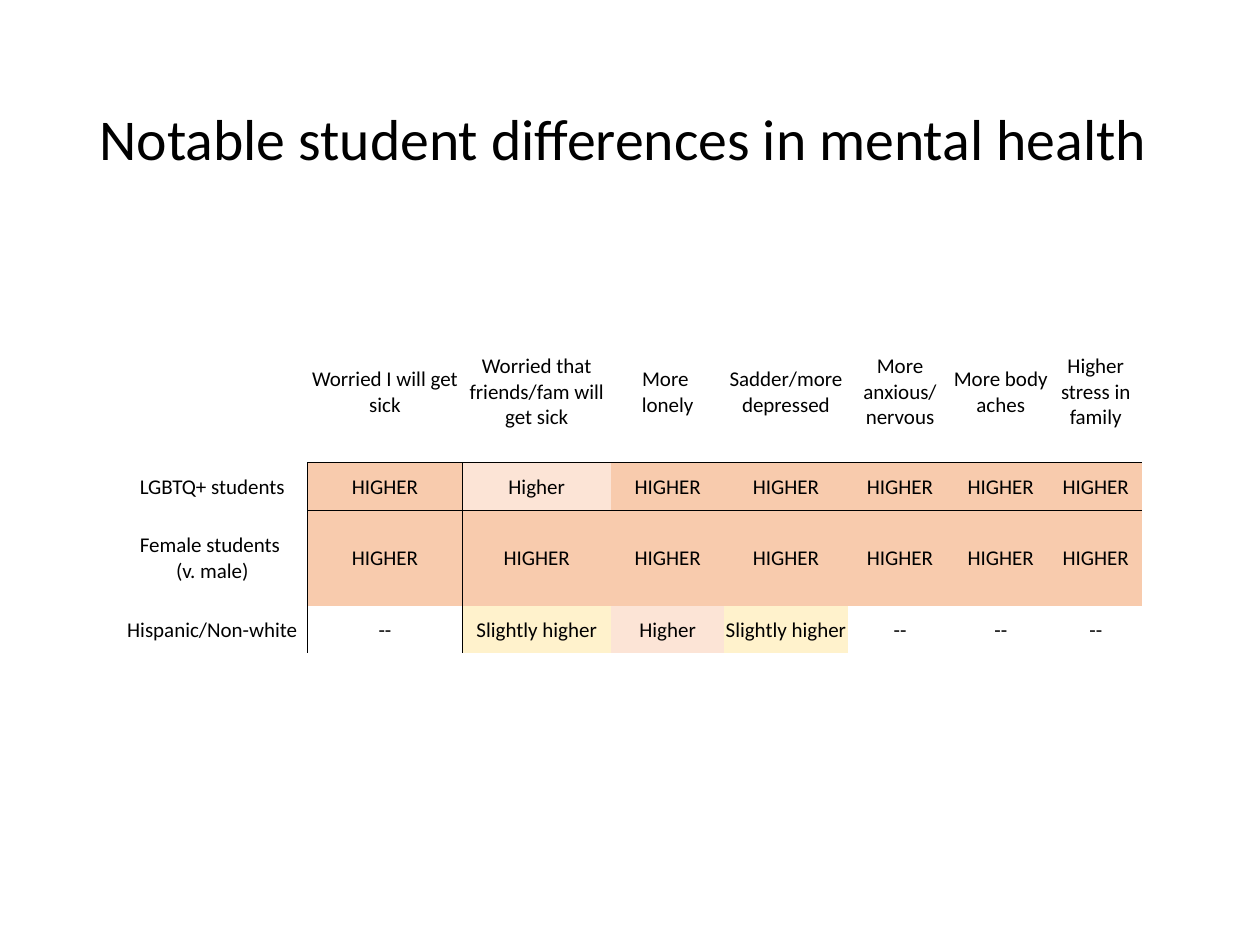
from dataclasses import dataclass

from lxml.etree import SubElement
from pptx import Presentation
from pptx.dml.color import RGBColor
from pptx.enum.text import MSO_ANCHOR as Anchor, MSO_AUTO_SIZE as AutoSize, PP_ALIGN as Align
from pptx.oxml.ns import qn
from pptx.util import Cm, Pt

FONT = "Calibri"
BLACK, WHITE = "000000", "FFFFFF"
NO_GRID_STYLE = "{2D5ABB26-0587-4C30-8999-92F81FD0307C}"
LEVEL_FILLS = {
    "HIGHER": "F8CBAD",
    "Higher": "FCE4D6",
    "Slightly higher": "FFF2CC",
    "--": WHITE,
}
COLUMN_WIDTHS = (3.84, 3.12, 3.0, 2.28, 2.49, 2.11, 1.95, 1.88)
HEADER_HEIGHT = 2.87


@dataclass
class StudentGroup:
    name: str
    height: float
    levels: tuple[str, ...]


# In cell texts, \n starts a paragraph and \v breaks a line.
CONCERNS = (
    "Worried I will get sick",
    "Worried that friends/fam will get sick",
    "More \nlonely",
    "Sadder/more depressed",
    "More anxious/\vnervous",
    "More body aches",
    "Higher stress in family",
)
GROUPS = (
    StudentGroup("LGBTQ+ students", 0.96, ("HIGHER", "Higher") + ("HIGHER",) * 5),
    StudentGroup("Female students \v(v. male)", 1.92, ("HIGHER",) * 7),
    StudentGroup("Hispanic/Non-white", 0.96,
                 ("--", "Slightly higher", "Higher", "Slightly higher", "--", "--", "--")),
)


def color(value: str) -> RGBColor:
    return RGBColor.from_string(value)


def add_run(paragraph, text: str, size: float) -> None:
    run = paragraph.add_run()
    run.text = text
    run.font.name = FONT
    run.font.size = Pt(size)
    run.font.color.rgb = color(BLACK)


def add_borders(cell, sides: str) -> None:
    """Draw thin lines on the given sides, named by letters in the order LRTB."""
    for side in sides:
        line = SubElement(cell._tc.get_or_add_tcPr(), qn(f"a:ln{side}"), w=str(Pt(0.5)))
        fill = SubElement(line, qn("a:solidFill"))
        SubElement(fill, qn("a:srgbClr"), val=BLACK)


def fill_cell(cell, text: str, fill: str, borders: str) -> None:
    add_borders(cell, borders)
    cell.fill.solid()
    cell.fill.fore_color.rgb = color(fill)
    cell.vertical_anchor = Anchor.MIDDLE
    cell.margin_left = cell.margin_right = cell.margin_top = Cm(0.02)
    cell.margin_bottom = 0
    for index, paragraph_text in enumerate(text.split("\n") if text else ()):
        frame = cell.text_frame
        paragraph = frame.add_paragraph() if index else frame.paragraphs[0]
        paragraph.alignment = Align.CENTER
        for position, line in enumerate(paragraph_text.split("\v")):
            if position:
                paragraph.add_line_break()
            add_run(paragraph, line, 12)


def borders_at(row: int, column: int) -> str:
    """Separate the labels in the first row and column from the levels."""
    sides = {"L": column == 1 and row > 0, "R": column == 0 and row > 0,
             "T": row == 1 and column > 0, "B": row == 0 and column > 0}
    return "".join(side for side, drawn in sides.items() if drawn)


def add_title(slide, text: str) -> None:
    title = slide.shapes.title
    title.left, title.top, title.width, title.height = Cm(1.75), Cm(1.01), Cm(21.9), Cm(3.68)
    frame = title.text_frame
    frame.auto_size = AutoSize.NONE
    frame.word_wrap = True
    frame.vertical_anchor = Anchor.MIDDLE
    paragraph = frame.paragraphs[0]
    paragraph.alignment = Align.LEFT
    paragraph.line_spacing = 0.9
    add_run(paragraph, text, 33)


def add_differences_table(slide) -> None:
    heights = (HEADER_HEIGHT, *(group.height for group in GROUPS))
    rows = (("", *CONCERNS), *((group.name, *group.levels) for group in GROUPS))
    table = slide.shapes.add_table(
        len(rows), len(COLUMN_WIDTHS), Cm(2.36), Cm(6.46),
        Cm(sum(COLUMN_WIDTHS)), Cm(sum(heights))).table
    table.first_row = table.horz_banding = False
    table._tbl.tblPr.find(qn("a:tableStyleId")).text = NO_GRID_STYLE
    for column, width in zip(table.columns, COLUMN_WIDTHS):
        column.width = Cm(width)
    for row, height in zip(table.rows, heights):
        row.height = Cm(height)
    for row_index, texts in enumerate(rows):
        for column_index, text in enumerate(texts):
            fill_cell(table.cell(row_index, column_index), text,
                      LEVEL_FILLS.get(text, WHITE), borders_at(row_index, column_index))


def main() -> None:
    presentation = Presentation()
    presentation.slide_width, presentation.slide_height = Cm(25.4), Cm(19.05)
    slide = presentation.slides.add_slide(presentation.slide_layouts[5])
    add_title(slide, "Notable student differences in mental health")
    add_differences_table(slide)
    presentation.save("out.pptx")


if __name__ == "__main__":
    main()
